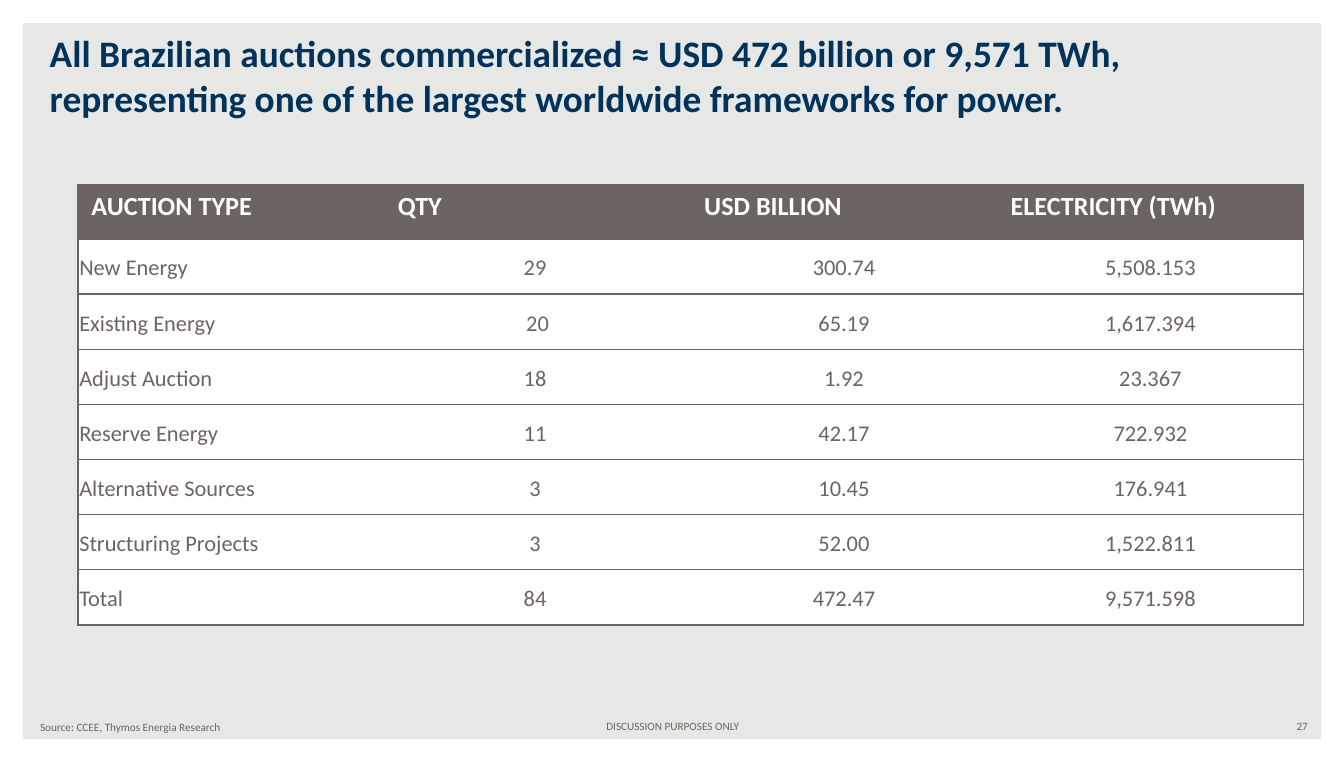
import pptx
import pptx.util
import pptx.dml.color
import pptx.enum.shapes
import pptx.enum.text
import lxml.etree
from pptx.oxml.ns import qn

TITLE = (
    "All Brazilian auctions commercialized ≈ USD 472 billion or 9,571 TWh, "
    "representing one of the largest worldwide frameworks for power."
)
HEADERS = ["AUCTION TYPE", "QTY", "USD BILLION", "ELECTRICITY (TWh)"]
AUCTIONS = [
    ("New Energy", "29 ", "300.74", "5,508.153"),
    ("Existing Energy", "20", "65.19", "1,617.394"),
    ("Adjust Auction", "18 ", "1.92", "23.367"),
    ("Reserve Energy", "11 ", "42.17", "722.932"),
    ("Alternative Sources", "3 ", "10.45", "176.941"),
    ("Structuring Projects", "3 ", "52.00", "1,522.811"),
    ("Total", "84 ", "472.47", "9,571.598"),
]
ALIGN = pptx.enum.text.PP_ALIGN
ANCHOR = pptx.enum.text.MSO_ANCHOR
FOOTERS = [
    ("DISCUSSION PURPOSES ONLY", 3.42, 5.3, 3.17, ALIGN.CENTER),
    ("27", 7.5, 5.3, 2.33, ALIGN.RIGHT),
    ("Source: CCEE, Thymos Energia Research", 0.2, 5.31, 3.17, ALIGN.LEFT),
]
COLORS = {
    "background": "E7E7E5",
    "white": "FFFFFF",
    "title": "00335C",
    "text": "6C6463",
    "edge": "6A6261",
}
FONT = "Calibri"
WIDTH, HEIGHT = 10, 5.67
TABLE_LEFT, TABLE_TOP, TABLE_WIDTH, ROW_HEIGHT = 0.58, 1.37, 9.12, 0.41
inch = pptx.util.Inches


def color(name):
    return pptx.dml.color.RGBColor.from_string(COLORS[name])


def paint(fill, name):
    fill.solid()
    fill.fore_color.rgb = color(name)


def write(text_frame, text, size, color_name, align, bold=False):
    text_frame.text = text
    paragraph = text_frame.paragraphs[0]
    paragraph.alignment = align
    font = paragraph.runs[0].font
    font.name, font.size, font.bold = FONT, pptx.util.Pt(size), bold
    font.color.rgb = color(color_name)
    return paragraph


def set_borders(cell, borders):
    properties = cell._tc.get_or_add_tcPr()
    for index, side in enumerate("LRTB"):
        line = lxml.etree.Element(qn("a:ln" + side))
        if borders[side]:
            color_name, points = borders[side]
            line.set("w", str(pptx.util.Pt(points)))
            fill = lxml.etree.SubElement(line, qn("a:solidFill"))
            lxml.etree.SubElement(fill, qn("a:srgbClr"), val=COLORS[color_name])
        else:
            lxml.etree.SubElement(line, qn("a:noFill"))
        properties.insert(index, line)


def add_title(slide):
    title = slide.shapes.title
    title.left, title.top = inch(0.27), inch(0.17)
    title.width, title.height = inch(9.43), inch(0.77)
    title.text_frame.vertical_anchor = ANCHOR.BOTTOM
    title.text_frame.auto_size = pptx.enum.text.MSO_AUTO_SIZE.NONE
    write(title.text_frame, TITLE, 20, "title", ALIGN.LEFT, True)


def add_frame(slide):
    frame = slide.shapes.add_shape(
        pptx.enum.shapes.MSO_SHAPE.FRAME, 0, 0, inch(WIDTH), inch(HEIGHT)
    )
    frame.adjustments[0] = 0.03
    frame.shadow.inherit = False
    paint(frame.fill, "white")
    frame.line.fill.background()


def add_footers(slide):
    for text, left, top, width, align in FOOTERS:
        box = slide.shapes.add_textbox(inch(left), inch(top), inch(width), inch(0.2))
        box.text_frame.word_wrap = True
        box.text_frame.vertical_anchor = ANCHOR.MIDDLE
        write(box.text_frame, text, 6, "text", align)


def add_auction_table(slide):
    rows = [HEADERS, *AUCTIONS]
    last_column = len(HEADERS) - 1
    table = slide.shapes.add_table(
        len(rows), len(HEADERS), inch(TABLE_LEFT), inch(TABLE_TOP),
        inch(TABLE_WIDTH), inch(ROW_HEIGHT * len(rows)),
    ).table
    table.horz_banding = False
    edge, rule = ("edge", 0.75), ("text", 1)
    for row, values in enumerate(rows):
        table.rows[row].height = inch(ROW_HEIGHT)
        for column, value in enumerate(values):
            cell = table.cell(row, column)
            if row == 0:
                paint(cell.fill, "text")
                write(cell.text_frame, value, 14, "white", ALIGN.LEFT, True)
            else:
                paint(cell.fill, "white")
                cell.vertical_anchor = ANCHOR.MIDDLE
                cell.margin_left = cell.margin_right = cell.margin_top = inch(0.01)
                cell.margin_bottom = 0
                align = ALIGN.CENTER if column else ALIGN.LEFT
                paragraph = write(cell.text_frame, value, 12, "text", align)
                paragraph.line_spacing = 1.07
            set_borders(cell, {
                "L": edge if column == 0 else None,
                "R": edge if column == last_column else None,
                "T": edge if row < 2 else rule,
                "B": edge if row == 0 else rule,
            })


def main():
    presentation = pptx.Presentation()
    presentation.slide_width, presentation.slide_height = inch(WIDTH), inch(HEIGHT)
    slide = presentation.slides.add_slide(presentation.slide_layouts[5])
    paint(slide.background.fill, "background")
    add_frame(slide)
    add_footers(slide)
    add_title(slide)
    add_auction_table(slide)
    presentation.save("out.pptx")


if __name__ == "__main__":
    main()
